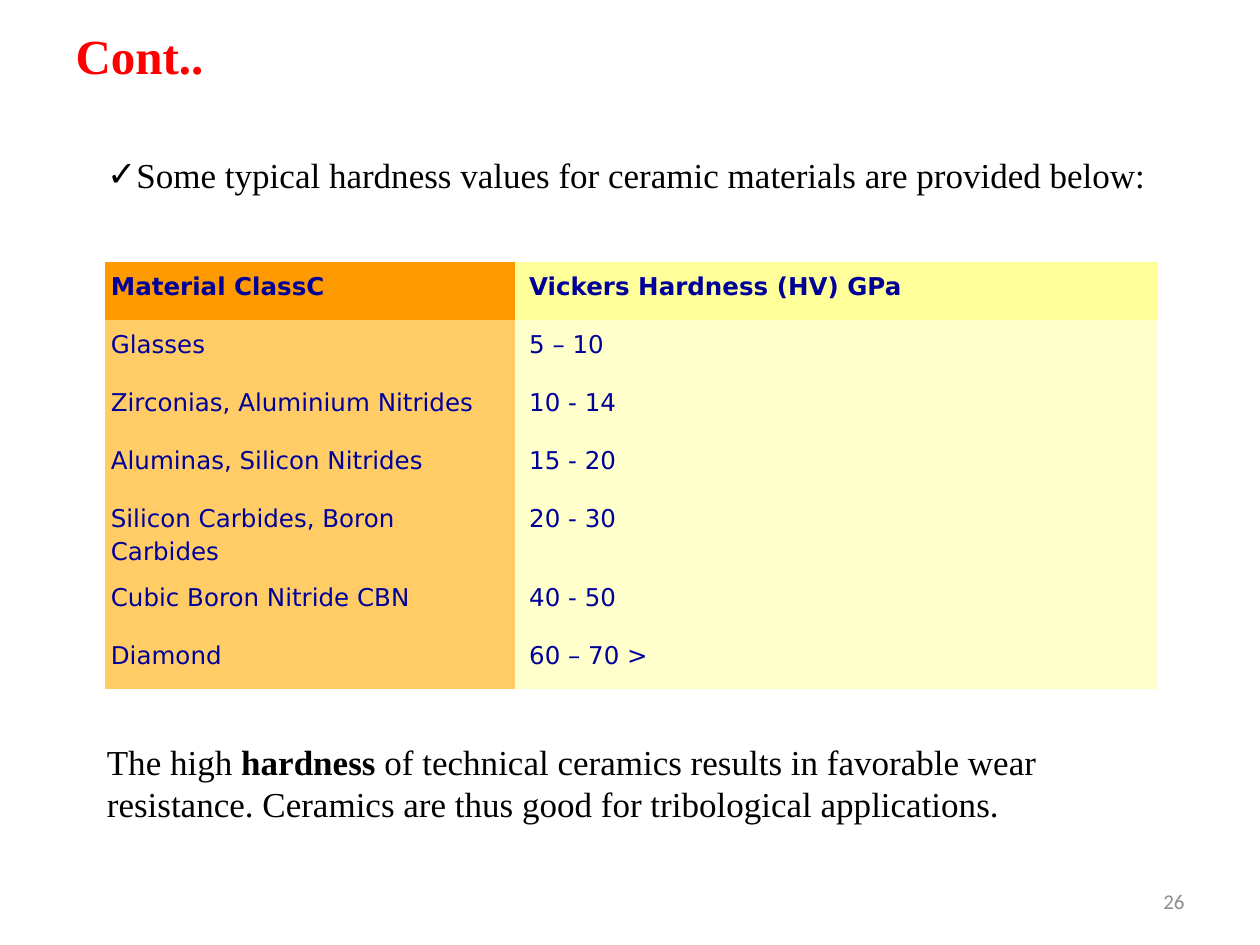
from typing import NamedTuple

from lxml.etree import SubElement
from pptx import Presentation
from pptx.dml.color import RGBColor
from pptx.enum.text import MSO_ANCHOR, PP_ALIGN
from pptx.oxml.ns import qn
from pptx.util import Inches, Pt

COLORS = {
    "title": "FF0000",
    "body": "000000",
    "page": "8C8C8C",
    "cell_text": "000099",
    "material_header": "FF9900",
    "hardness_header": "FFFF99",
    "material": "FFCC66",
    "hardness": "FFFFCC",
}
SERIF = "Times New Roman"
NO_STYLE_NO_GRID = "{2D5ABB26-0587-4C30-8999-92F81FD0307C}"


class Hardness(NamedTuple):
    material: str
    vickers: str


class Column(NamedTuple):
    width: float
    left_margin: float
    header_fill: str
    fill: str


HEADER = Hardness("Material ClassC", "Vickers Hardness (HV) GPa")
VALUES = [
    Hardness("Glasses", "5 – 10"),
    Hardness("Zirconias, Aluminium Nitrides", "10 - 14"),
    Hardness("Aluminas, Silicon Nitrides", "15 - 20"),
    Hardness("Silicon Carbides, Boron Carbides", "20 - 30"),
    Hardness("Cubic Boron Nitride CBN", "40 - 50"),
    Hardness("Diamond", "60 – 70 >"),
]
COLUMNS = [
    Column(3.26, 0.05, "material_header", "material"),
    Column(5.1, 0.11, "hardness_header", "hardness"),
]
ROW_HEIGHT = 0.46


def place(shape, left: float, top: float, width: float, height: float) -> None:
    shape.left, shape.top = Inches(left), Inches(top)
    shape.width, shape.height = Inches(width), Inches(height)


def set_font(font, name: str, size: int, color: str, bold: bool | None = None) -> None:
    font.name, font.size, font.bold = name, Pt(size), bold
    font.color.rgb = RGBColor.from_string(COLORS[color])


def add_check_bullet(paragraph, indent: float) -> None:
    properties = paragraph._p.get_or_add_pPr()
    properties.set("marL", str(Inches(indent)))
    properties.set("indent", str(-Inches(indent)))
    SubElement(properties, qn("a:buFont"), typeface="DejaVu Sans")
    SubElement(properties, qn("a:buChar"), char="✓")


def add_text_box(slide, left: float, top: float, width: float, height: float):
    frame = slide.shapes.add_textbox(
        Inches(left), Inches(top), Inches(width), Inches(height)
    ).text_frame
    frame.word_wrap = True
    return frame


def add_hardness_table(slide, left: float, top: float) -> None:
    rows = [HEADER, *VALUES]
    width = sum(column.width for column in COLUMNS)
    table_frame = slide.shapes.add_table(
        len(rows), len(COLUMNS), Inches(left), Inches(top),
        Inches(width), Inches(ROW_HEIGHT * len(rows)),
    )
    for style in table_frame.element.iter(qn("a:tableStyleId")):
        style.text = NO_STYLE_NO_GRID
    table = table_frame.table
    table.first_row = table.horz_banding = False
    for row in table.rows:
        row.height = Inches(ROW_HEIGHT)
    for c, column in enumerate(COLUMNS):
        table.columns[c].width = Inches(column.width)
        for r, entry in enumerate(rows):
            is_header = r == 0
            cell = table.cell(r, c)
            cell.margin_left = Inches(column.left_margin)
            cell.margin_right = cell.margin_top = cell.margin_bottom = Inches(0.05)
            cell.fill.solid()
            fill = column.header_fill if is_header else column.fill
            cell.fill.fore_color.rgb = RGBColor.from_string(COLORS[fill])
            cell.text = entry[c]
            paragraph = cell.text_frame.paragraphs[0]
            paragraph.line_spacing = 1.15
            set_font(paragraph.font, "DejaVu Sans", 14, "cell_text", is_header)


def main() -> None:
    presentation = Presentation()
    presentation.slide_width, presentation.slide_height = Inches(10), Inches(7.5)
    slide = presentation.slides.add_slide(presentation.slide_layouts[1])

    title = slide.shapes.title
    place(title, 0.5, 0.17, 9, 0.53)
    title.text = "Cont.."
    heading = title.text_frame.paragraphs[0]
    heading.alignment = PP_ALIGN.LEFT
    set_font(heading.font, SERIF, 28, "title", True)

    intro = slide.placeholders[1]
    place(intro, 0.75, 1.17, 8.75, 0.44)
    intro.text = "Some typical hardness values for ceramic materials are provided below:"
    statement = intro.text_frame.paragraphs[0]
    statement.space_before = Pt(0)
    set_font(statement.font, SERIF, 20, "body")
    add_check_bullet(statement, 0.23)

    add_hardness_table(slide, 0.83, 2.08)

    conclusion = add_text_box(slide, 0.75, 5.83, 8.17, 0.77).paragraphs[0]
    set_font(conclusion.font, SERIF, 20, "body")
    conclusion.add_run().text = "The high "
    keyword = conclusion.add_run()
    keyword.text = "hardness"
    keyword.font.bold = True
    conclusion.add_run().text = (
        " of technical ceramics results in favorable wear resistance. "
        "Ceramics are thus good for tribological applications."
    )

    page_frame = add_text_box(slide, 7.17, 6.95, 2.33, 0.4)
    page_frame.vertical_anchor = MSO_ANCHOR.MIDDLE
    page_number = page_frame.paragraphs[0]
    page_number.text = "26"
    page_number.alignment = PP_ALIGN.RIGHT
    set_font(page_number.font, "Calibri", 12, "page")

    presentation.save("out.pptx")


if __name__ == "__main__":
    main()
